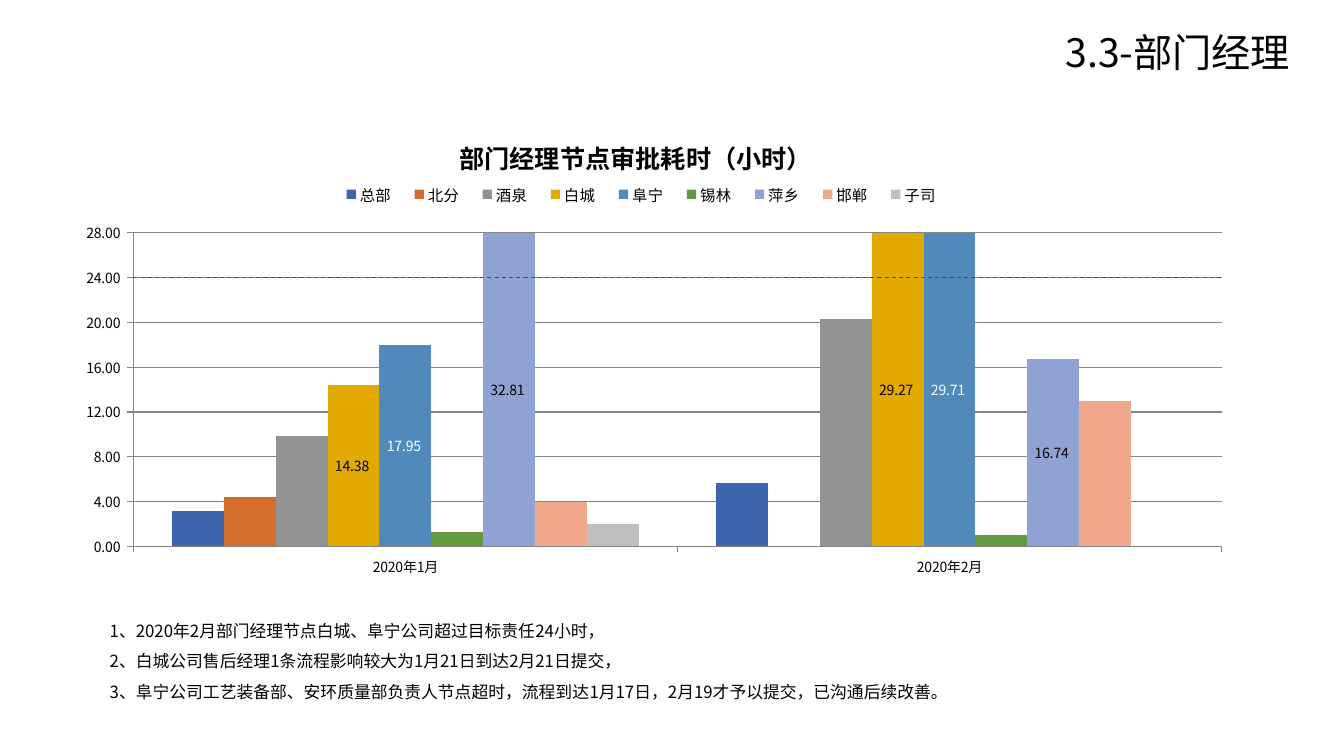
import pptx
import pptx.chart.data
import pptx.dml.color
import pptx.enum.chart
import pptx.enum.dml
import pptx.enum.shapes
import pptx.enum.text
import pptx.oxml
import pptx.oxml.ns
import pptx.util

FONT = "Noto Sans CJK SC"
COLORS = {"text": "000000", "light": "FFFFFF", "grid": "868686", "target": "FF0000"}
HEADING = "3.3-部门经理"
CHART_TITLE = "部门经理节点审批耗时（小时）"
MONTHS = ["2020年1月", "2020年2月"]
# department, hours per month, bar colour, label colour
DEPARTMENTS = [
    ("总部", (3.2, 5.7), "3C65AE", None),
    ("北分", (4.4, None), "D26E2A", None),
    ("酒泉", (9.9, 20.3), "929292", None),
    ("白城", (14.38, 29.27), "E2AA00", "text"),
    ("阜宁", (17.95, 29.71), "508ABD", "light"),
    ("锡林", (1.3, 1), "629A3E", None),
    ("萍乡", (32.81, 16.74), "90A1D4", "text"),
    ("邯郸", (4, 13), "F1A78A", None),
    ("子司", (2, None), "BFBFBF", None),
]
NOTES = [
    "1、2020年2月部门经理节点白城、阜宁公司超过目标责任24小时，",
    "2、白城公司售后经理1条流程影响较大为1月21日到达2月21日提交，",
    "3、阜宁公司工艺装备部、安环质量部负责人节点超时，流程到达1月17日，2月19才予以提交，已沟通后续改善。",
]
TARGET_HOURS, MAX_HOURS, STEP_HOURS = 24, 28, 4
HOURS_FORMAT = "0.00_ "
CHART_BOX = (0.63, 1.19, 11.94, 4.61)
PLOT_SHARE = (0.058, 0.243, 0.904, 0.675)
LEGEND_SHARE = (0.22, 0.13, 0.52, 0.06)
TITLE_SHARE = (0.325, 0.025)


def rgb(name):
    return pptx.dml.color.RGBColor.from_string(COLORS.get(name, name))


def inches(box):
    return [pptx.util.Inches(length) for length in box]


def style(font, size, color="text", bold=False):
    font.name, font.size, font.bold = FONT, pptx.util.Pt(size), bold
    font.color.rgb = rgb(color)


def add_text(slide, box, lines, size, spacing):
    frame = slide.shapes.add_textbox(*inches(box)).text_frame
    frame.word_wrap = True
    frame.vertical_anchor = pptx.enum.text.MSO_ANCHOR.TOP
    for index, line in enumerate(lines):
        paragraph = frame.add_paragraph() if index else frame.paragraphs[0]
        paragraph.line_spacing = spacing
        run = paragraph.add_run()
        run.text = line
        style(run.font, size)


def layout(shares, inner=False):
    """Make a manual chart layout from x, y and optionally width and height."""
    target = '<c:layoutTarget val="inner"/>' if inner else ""
    modes = '<c:xMode val="edge"/><c:yMode val="edge"/>'
    sizes = "".join(f'<c:{key} val="{share}"/>' for key, share in zip("xywh", shares))
    return pptx.oxml.parse_xml(
        f'<c:layout {pptx.oxml.ns.nsdecls("c")}><c:manualLayout>'
        f"{target}{modes}{sizes}</c:manualLayout></c:layout>")


def place(parent, shares, after=None, inner=False):
    for old in parent.findall(pptx.oxml.ns.qn("c:layout")):
        parent.remove(old)
    if after:
        parent.find(pptx.oxml.ns.qn(after)).addnext(layout(shares, inner))
    else:
        parent.insert(0, layout(shares, inner))


def use_east_asian_font(root):
    for latin in list(root.iter(pptx.oxml.ns.qn("a:latin"))):
        latin.addnext(pptx.oxml.parse_xml(
            f'<a:ea {pptx.oxml.ns.nsdecls("a")} typeface="{FONT}"/>'))


def style_axis(axis):
    axis.major_tick_mark = pptx.enum.chart.XL_TICK_MARK.OUTSIDE
    axis.minor_tick_mark = pptx.enum.chart.XL_TICK_MARK.NONE
    axis.format.line.color.rgb = rgb("grid")
    axis.format.line.width = pptx.util.Pt(0.75)
    style(axis.tick_labels.font, 10)


def add_hours_chart(slide):
    data = pptx.chart.data.CategoryChartData(number_format=HOURS_FORMAT)
    data.categories = MONTHS
    for department, hours, _, _ in DEPARTMENTS:
        data.add_series(department, hours)
    chart = slide.shapes.add_chart(
        pptx.enum.chart.XL_CHART_TYPE.COLUMN_CLUSTERED, *inches(CHART_BOX), data).chart
    style(chart.font, 10)

    run = chart.chart_title.text_frame.paragraphs[0].add_run()
    run.text = CHART_TITLE
    style(run.font, 18, bold=True)
    chart.has_legend = True
    chart.legend.position = pptx.enum.chart.XL_LEGEND_POSITION.TOP
    chart.legend.include_in_layout = False
    style(chart.legend.font, 11)

    style_axis(chart.category_axis)
    hours_axis = chart.value_axis
    style_axis(hours_axis)
    hours_axis.minimum_scale, hours_axis.maximum_scale = 0, MAX_HOURS
    hours_axis.major_unit = STEP_HOURS
    hours_axis.tick_labels.number_format = HOURS_FORMAT
    hours_axis.tick_labels.number_format_is_linked = False
    hours_axis.major_gridlines.format.line.color.rgb = rgb("grid")
    hours_axis.major_gridlines.format.line.width = pptx.util.Pt(0.75)

    plot = chart.plots[0]
    plot.gap_width, plot.overlap, plot.vary_by_categories = 150, 0, False
    for series, (_, _, bar_color, label_color) in zip(plot.series, DEPARTMENTS):
        series.format.fill.solid()
        series.format.fill.fore_color.rgb = rgb(bar_color)
        series.invert_if_negative = False
        if label_color:
            labels = series.data_labels
            labels.show_value = True
            labels.position = pptx.enum.chart.XL_LABEL_POSITION.CENTER
            labels.number_format = HOURS_FORMAT
            labels.number_format_is_linked = False
            style(labels.font, 10, label_color)

    root = chart.element if hasattr(chart, "element") else chart._chartSpace
    place(root.chart.plotArea, PLOT_SHARE, inner=True)
    place(root.chart.find(pptx.oxml.ns.qn("c:title")), TITLE_SHARE, "c:tx")
    place(root.chart.find(pptx.oxml.ns.qn("c:legend")), LEGEND_SHARE, "c:legendPos")
    use_east_asian_font(root)


def add_target_line(slide):
    left, top, width, height = CHART_BOX
    x, y, w, h = PLOT_SHARE
    start = left + x * width
    level = top + height * (y + h * (1 - TARGET_HOURS / MAX_HOURS))
    line = slide.shapes.add_connector(
        pptx.enum.shapes.MSO_CONNECTOR.STRAIGHT,
        *inches((start, level, start + w * width, level)))
    line.line.color.rgb = rgb("target")
    line.line.width = pptx.util.Pt(0.75)
    line.line.dash_style = pptx.enum.dml.MSO_LINE.DASH
    line.element.spPr.append(pptx.oxml.parse_xml(
        f'<a:effectLst {pptx.oxml.ns.nsdecls("a")}/>'))


def main():
    deck = pptx.Presentation()
    deck.slide_width, deck.slide_height = inches((13.33, 7.5))
    slide = deck.slides.add_slide(deck.slide_layouts[6])
    add_text(slide, (10.47, 0.28, 2.5, 0.49), [HEADING], 28, 0.9)
    add_text(slide, (0.99, 6.01, 11.44, 1.01), NOTES, 12, 1.5)
    add_hours_chart(slide)
    add_target_line(slide)
    use_east_asian_font(slide.element)
    deck.save("out.pptx")


if __name__ == "__main__":
    main()
